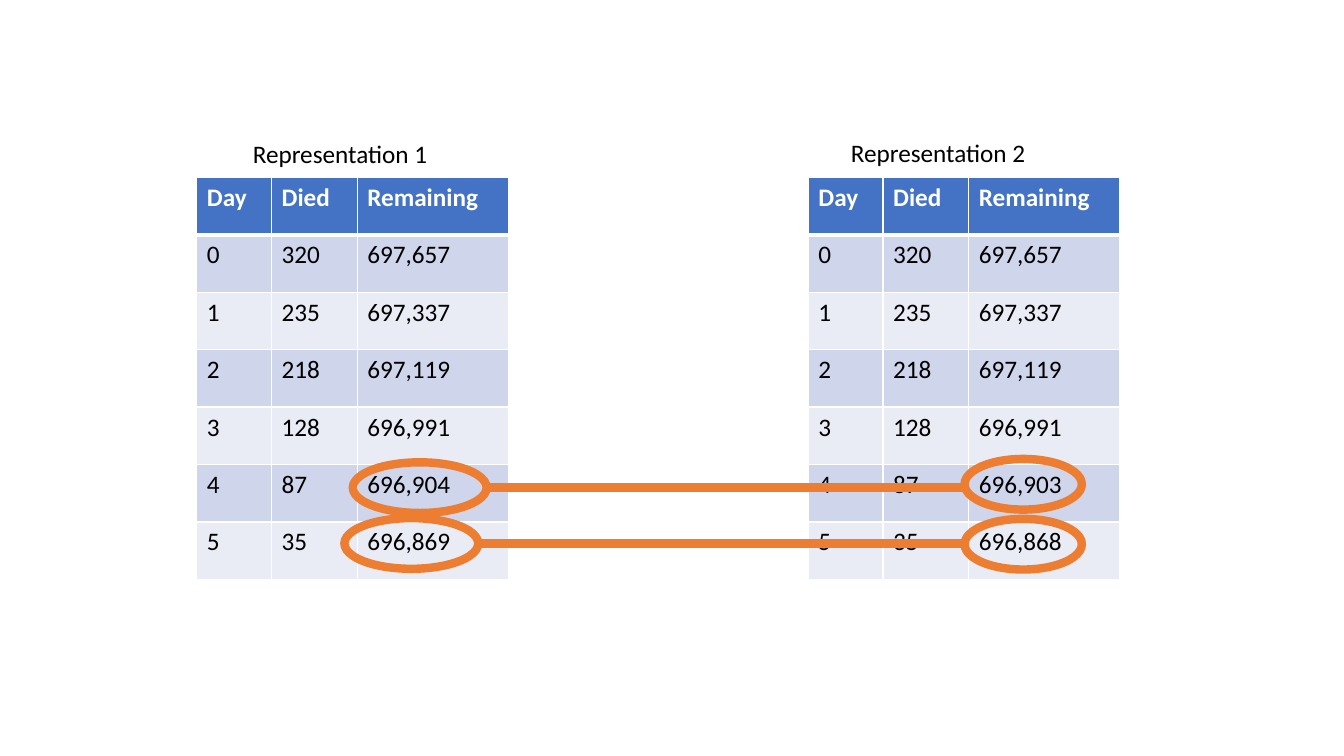
"""Build a slide comparing two representations of a table of remaining values."""
import dataclasses

import lxml.etree
import pptx
import pptx.dml.color
import pptx.enum.shapes
import pptx.oxml.ns
import pptx.util

Pt = pptx.util.Pt


@dataclasses.dataclass(frozen=True)
class Theme:
    font: str = "Calibri"
    size: float = 18
    text: str = "000000"
    white: str = "FFFFFF"
    header: str = "4472C4"
    bands: tuple = ("CFD5EA", "E9EBF5")
    accent: str = "ED7D31"
    mark_width: float = 6
    rule_width: float = 1
    header_rule_width: float = 3


THEME = Theme()
HEADINGS = ("Day", "Died", "Remaining")
SHARED_ROWS = (
    ("0", "320", "697,657"),
    ("1", "235", "697,337"),
    ("2", "218", "697,119"),
    ("3", "128", "696,991"),
)
COLUMN_WIDTHS = (53.4, 61.2, 108)
ROW_HEIGHT = 41.04
TABLE_TOP = 126.7


def color(value):
    return pptx.dml.color.RGBColor.from_string(value)


def write_text(frame, text, size=THEME.size, fill=THEME.text, bold=False):
    paragraph = frame.paragraphs[0]
    run = paragraph.add_run()
    run.text = text
    run.font.name = THEME.font
    run.font.size = Pt(size)
    run.font.bold = bold
    run.font.color.rgb = color(fill)


def set_border(cell, side, width):
    properties = cell._tc.get_or_add_tcPr()
    qn = pptx.oxml.ns.qn
    line = lxml.etree.SubElement(properties, qn(f"a:ln{side}"), w=str(Pt(width)))
    fill = lxml.etree.SubElement(line, qn("a:solidFill"))
    lxml.etree.SubElement(fill, qn("a:srgbClr"), val=THEME.white)


def add_data_table(slide, left, rows):
    shape = slide.shapes.add_table(
        len(rows), len(HEADINGS), Pt(left), Pt(TABLE_TOP),
        Pt(sum(COLUMN_WIDTHS)), Pt(ROW_HEIGHT * len(rows)))
    table = shape.table
    table.horz_banding = False
    for column, width in zip(table.columns, COLUMN_WIDTHS):
        column.width = Pt(width)
    for index, values in enumerate(rows):
        table.rows[index].height = Pt(ROW_HEIGHT)
        is_header = index == 0
        background = THEME.header if is_header else THEME.bands[(index - 1) % 2]
        thick_side = {0: "B", 1: "T"}.get(index)
        for position, value in enumerate(values):
            cell = table.cell(index, position)
            for side in "LRTB":
                thick = side == thick_side
                set_border(cell, side, THEME.header_rule_width if thick else THEME.rule_width)
            cell.fill.solid()
            cell.fill.fore_color.rgb = color(background)
            write_text(cell.text_frame, value, bold=is_header,
                       fill=THEME.white if is_header else THEME.text)


def add_caption(slide, left, top, text):
    box = slide.shapes.add_textbox(Pt(left), Pt(top), Pt(168), Pt(29))
    box.text_frame.word_wrap = True
    write_text(box.text_frame, text)


def style_mark(line):
    line.color.rgb = color(THEME.accent)
    line.width = Pt(THEME.mark_width)


def add_ring(slide, left, top, width):
    ring = slide.shapes.add_shape(
        pptx.enum.shapes.MSO_SHAPE.OVAL, Pt(left), Pt(top), Pt(width), Pt(36.2))
    ring.shadow.inherit = False
    ring.fill.background()
    style_mark(ring.line)
    return ring


def add_link(slide, first, second):
    middle = first.top + first.height // 2
    link = slide.shapes.add_connector(
        pptx.enum.shapes.MSO_CONNECTOR.STRAIGHT,
        first.left + first.width, middle, second.left, middle)
    style_mark(link.line)
    lxml.etree.SubElement(link._element.spPr, pptx.oxml.ns.qn("a:effectLst"))


def main():
    presentation = pptx.Presentation()
    presentation.slide_width, presentation.slide_height = Pt(960), Pt(540)
    slide = presentation.slides.add_slide(presentation.slide_layouts[6])
    tables = (
        (140.6, ("696,904", "696,869")),
        (577.4, ("696,903", "696,868")),
    )
    for left, (day_four, day_five) in tables:
        rows = (HEADINGS, *SHARED_ROWS, ("4", "87", day_four), ("5", "35", day_five))
        add_data_table(slide, left, rows)
    for left, top, matching_top in ((252, 330.2, 327.8), (246, 370.1, 370.6)):
        first = add_ring(slide, left, top, 95.6)
        second = add_ring(slide, 689, matching_top, 83.8)
        add_link(slide, first, second)
    add_caption(slide, 173.5, 95.3, "Representation 1")
    add_caption(slide, 600.7, 94.5, "Representation 2")
    presentation.save("out.pptx")


if __name__ == "__main__":
    main()
